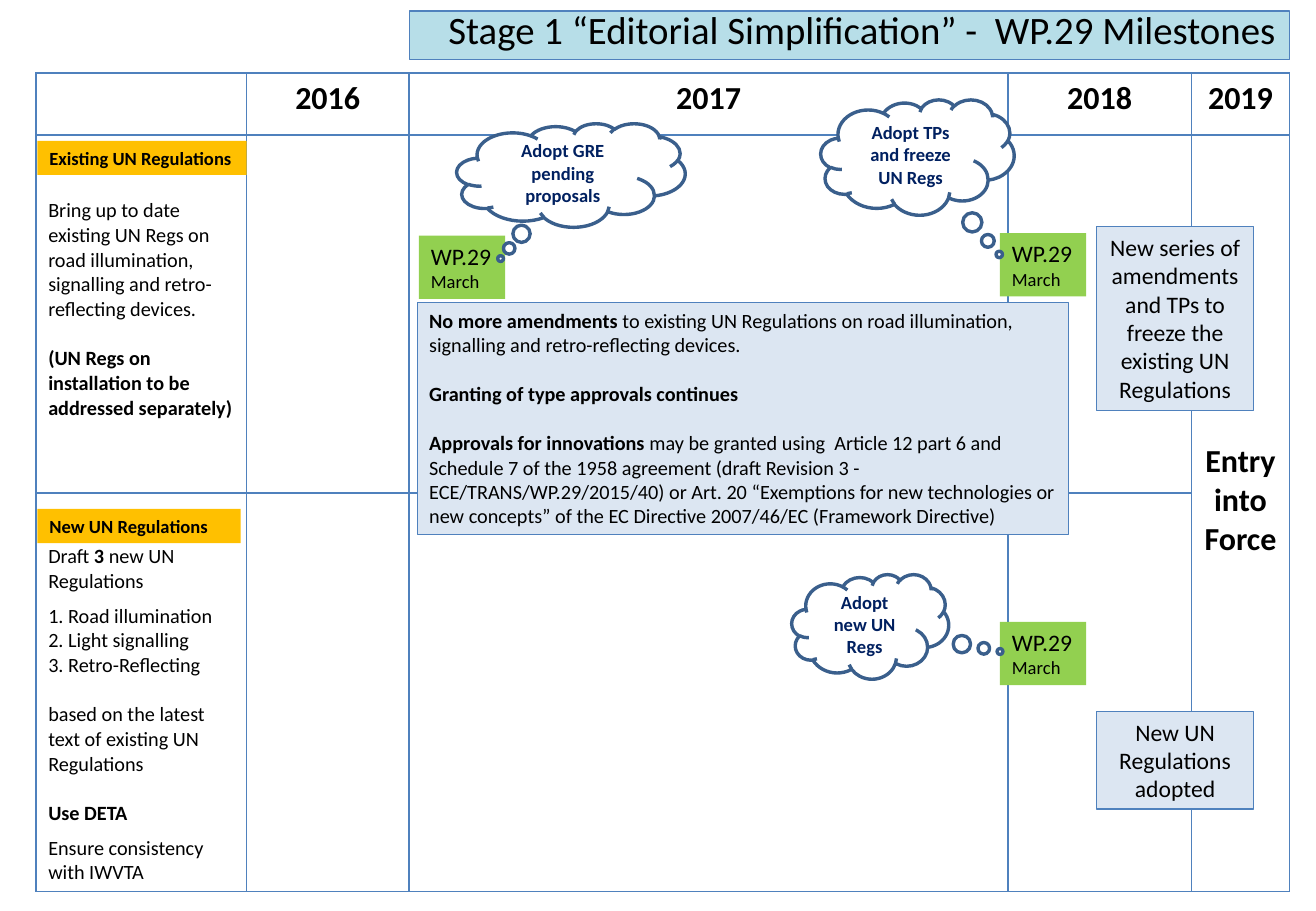
from lxml import etree
from pptx import Presentation
from pptx import util as u
from pptx.dml.color import RGBColor
from pptx.enum import shapes, text
from pptx.oxml.ns import qn

TITLE = "Stage 1 “Editorial Simplification” -  WP.29 Milestones"
YEARS = ["", "2016", "2017", "2018", "2019"]
EXISTING_WORK = [
    (0, [("Bring up to date existing UN Regs on road illumination, "
          "signalling and retro-reflecting devices.", False)]),
    (14.6, [("(UN Regs on installation to be addressed separately)", True)]),
]
NEW_WORK = [
    (0, [("Draft", False), (" 3 ", True), ("new UN Regulations", False)]),
    (6, [("1. Road illumination", False)]),
    (0, [("2. Light signalling", False)]),
    (0, [("3. Retro-Reflecting", False)]),
    (14.6, [("based on the latest text of existing UN Regulations", False)]),
    (14.6, [("Use DETA", True)]),
    (6, [("Ensure consistency with IWVTA", False)]),
]
ENTRY = [(0, [(word, True)]) for word in ("Entry", "into", "Force")]
RULES = [
    (0, [("No more amendments ", True),
         ("to existing UN Regulations on road illumination, signalling and "
          "retro-reflecting devices.", False)]),
    (14.6, [("Granting of type approvals continues", True)]),
    (14.6, [("Approvals for innovations ", True),
            ("may be granted using  Article 12 part 6 and Schedule 7 of the 1958 "
             "agreement (draft Revision 3 - ECE/TRANS/WP.29/2015/40) or Art. 20 "
             "“Exemptions for new technologies or new concepts” of the EC Directive "
             "2007/46/EC (Framework Directive)", False)]),
]
SECTIONS = [("Existing UN Regulations", (22.2, 83.5, 124, 20.2)),
            ("New UN Regulations", (22.2, 301.7, 120.5, 20.2))]
SESSIONS = [(248.3, 139.7), (592.7, 138.2), (592.7, 368.6)]
OUTCOMES = [("New series of amendments and TPs to freeze the existing UN Regulations",
             (650, 134.4, 93, 109)),
            ("New UN Regulations adopted", (650, 421.8, 93, 57.8))]
THOUGHTS = [("Adopt GRE pending proposals", (270.7, 73.2, 135.4, 61.4), (-0.308, 0.805)),
            ("Adopt new UN Regs", (469.3, 340.4, 93, 62), (0.827, 0.238)),
            ("Adopt TPs and freeze UN Regs", (486.5, 59, 114.6, 68.4), (0.423, 0.843))]

COLORS = {"black": "000000", "navy": "002060", "rule": "4F81BD", "cloud": "3A5F8C",
          "white": "FFFFFF", "banner": "B7DEE8", "section": "FFC000",
          "session": "92D050", "panel": "DCE6F2"}
FONT = "Calibri"
LEFT, TOP = 21.4, 43.2
COLUMNS = [124.6, 96.5, 355, 108.6, 58.4]
ROWS = [36.8, 212.2, 236.4]
CENTER = text.PP_ALIGN.CENTER
SECTION_TOPS = [37.7, 30.5]


def color(name):
    return RGBColor.from_string(COLORS[name])


def apply(target, formats):
    for key, value in formats.items():
        setattr(target, key, value)


def write(frame, paragraphs, size, align=text.PP_ALIGN.LEFT, ink="black"):
    frame.word_wrap = True
    for index, (before, runs) in enumerate(paragraphs):
        line = frame.paragraphs[0] if index == 0 else frame.add_paragraph()
        apply(line, {"alignment": align, "space_before": u.Pt(before),
                     "space_after": u.Pt(0)})
        for words, bold in runs:
            run = line.add_run()
            run.text = words
            apply(run.font, {"name": FONT, "size": u.Pt(size), "bold": bold})
            run.font.color.rgb = color(ink)


def paint(part, fill, line=None, width=0.75):
    part.fill.solid()
    part.fill.fore_color.rgb = color(fill)
    if line:
        part.line.color.rgb = color(line)
        part.line.width = u.Pt(width)
    else:
        part.line.fill.background()


def add_part(slide, kind, box, fill, line=None, width=0.75,
             anchor=text.MSO_ANCHOR.TOP):
    part = slide.shapes.add_shape(kind, *map(u.Pt, box))
    part.shadow.inherit = False
    paint(part, fill, line, width)
    part.text_frame.vertical_anchor = anchor
    return part


def add_borders(cell):
    properties = cell._tc.get_or_add_tcPr()
    for position, side in enumerate(("a:lnL", "a:lnR", "a:lnT", "a:lnB")):
        border = etree.Element(qn(side), w=str(u.Pt(1)))
        solid = etree.SubElement(border, qn("a:solidFill"))
        etree.SubElement(solid, qn("a:srgbClr"), val=COLORS["rule"])
        properties.insert(position, border)


def add_banner(slide):
    banner = slide.shapes.title
    box = {"left": 242.6, "top": 6.5, "width": 521.6, "height": 28.8}
    apply(banner, {side: u.Pt(value) for side, value in box.items()})
    paint(banner, "banner", "rule")
    frame = banner.text_frame
    apply(frame, {"auto_size": text.MSO_AUTO_SIZE.NONE,
                  "vertical_anchor": text.MSO_ANCHOR.TOP})
    write(frame, [(0, [(TITLE, False)])], 23, text.PP_ALIGN.RIGHT)
    frame.paragraphs[0].line_spacing = u.Pt(20.8)


def add_timeline(slide):
    box = (LEFT, TOP, sum(COLUMNS), sum(ROWS))
    timeline = slide.shapes.add_table(len(ROWS), len(COLUMNS), *map(u.Pt, box)).table
    apply(timeline, {"first_row": False, "horz_banding": False})
    for column, width in zip(timeline.columns, COLUMNS):
        column.width = u.Pt(width)
    for row, height in zip(timeline.rows, ROWS):
        row.height = u.Pt(height)
    for cell in timeline.iter_cells():
        cell.fill.background()
        add_borders(cell)
    for index, year in enumerate(YEARS):
        if year:
            write(timeline.cell(0, index).text_frame, [(0, [(year, True)])], 19, CENTER)
    for index, work in enumerate((EXISTING_WORK, NEW_WORK)):
        cell = timeline.cell(index + 1, 0)
        cell.margin_top = u.Pt(SECTION_TOPS[index])
        write(cell.text_frame, work, 12)
    entry = timeline.cell(1, 4)
    entry.merge(timeline.cell(2, 4))
    apply(entry, {"vertical_anchor": text.MSO_ANCHOR.MIDDLE, "margin_bottom": u.Pt(19)})
    write(entry.text_frame, ENTRY, 19, CENTER)


def main():
    deck = Presentation()
    apply(deck, {"slide_width": u.Pt(780), "slide_height": u.Pt(540)})
    slide = deck.slides.add_slide(deck.slide_layouts[5])
    add_banner(slide)
    add_timeline(slide)
    rectangle = shapes.MSO_SHAPE.RECTANGLE
    for label, box in SECTIONS:
        section = add_part(slide, rectangle, box, "section")
        write(section.text_frame, [(0, [(label, True)])], 11)
    rules = add_part(slide, rectangle, (247.3, 179.3, 386, 137.5), "panel", "rule")
    write(rules.text_frame, RULES, 12)
    for left, top in SESSIONS:
        session = add_part(slide, rectangle, (left, top, 51.2, 37.5), "session")
        write(session.text_frame, [(0, [("WP.29", False)]), (0, [("March", False)])], 14)
        session.text_frame.paragraphs[1].runs[0].font.size = u.Pt(11)
    for label, box in OUTCOMES:
        outcome = add_part(slide, rectangle, box, "panel", "rule")
        write(outcome.text_frame, [(0, [(label, False)])], 14, CENTER)
    for label, box, tail in THOUGHTS:
        thought = add_part(slide, shapes.MSO_SHAPE.CLOUD_CALLOUT, box, "white", "cloud",
                           2, text.MSO_ANCHOR.MIDDLE)
        for index, offset in enumerate(tail):
            thought.adjustments[index] = offset
        write(thought.text_frame, [(0, [(label, True)])], 11, CENTER, "navy")
    deck.save("out.pptx")


if __name__ == "__main__":
    main()
